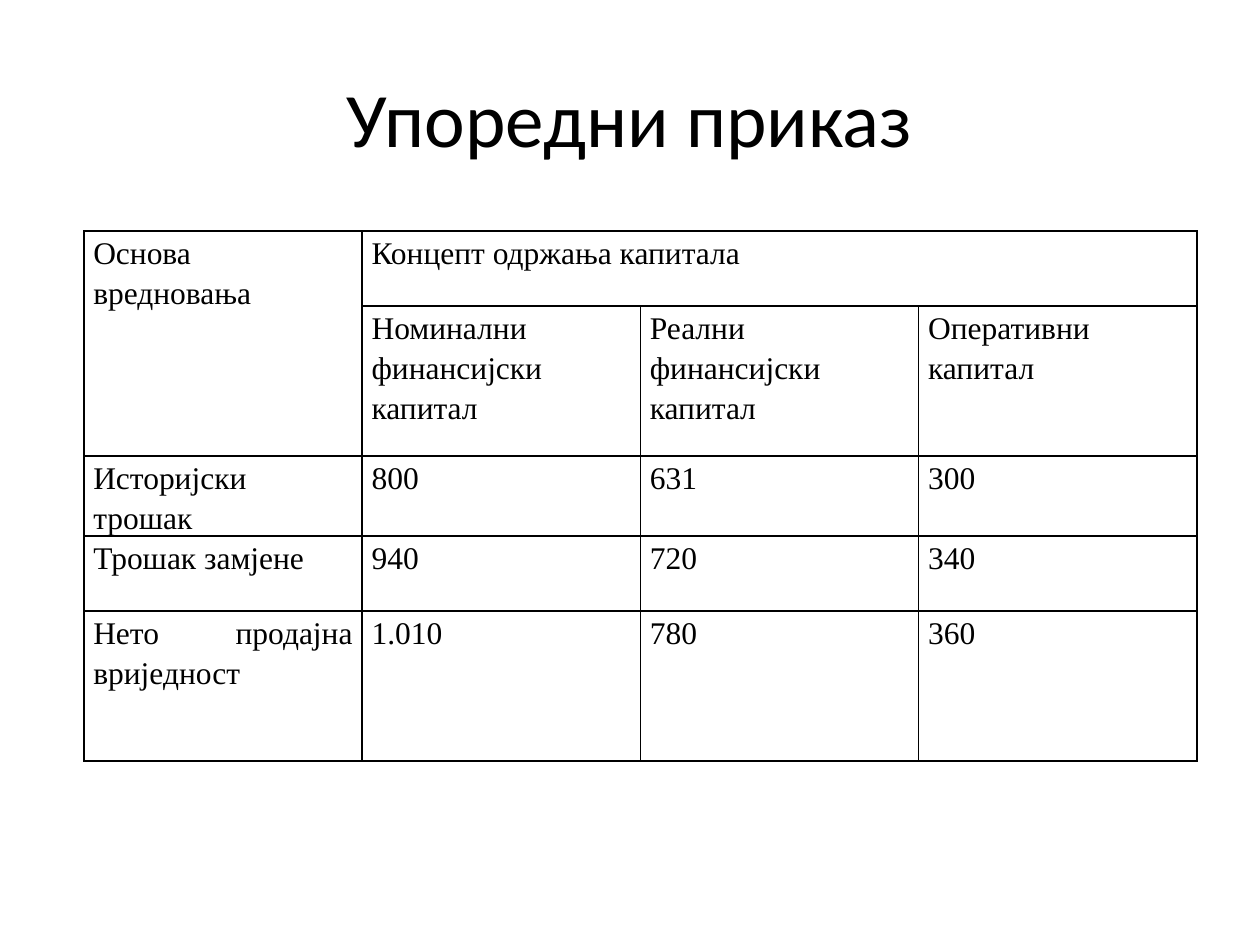
import pptx
import pptx.dml.color
import pptx.enum.text
import pptx.oxml
import pptx.oxml.ns
import pptx.util
from pptx.util import Cm

BLACK = pptx.dml.color.RGBColor(0x00, 0x00, 0x00)

HEADING = "Упоредни приказ"
CAPITAL_ROWS = [
    ["Основа вредновања", "Концепт одржања капитала", None, None],
    [None, "Номинални финансијски капитал", "Реални финансијски капитал", "Оперативни капитал"],
    ["Историјски трошак", "800", "631", "300"],
    ["Трошак замјене", "940", "720", "340"],
    ["Нето продајна вриједност", "1.010", "780", "360"],
]
SINGLE, DOUBLE = Cm(1.51), Cm(3.02)
ROW_HEIGHTS = [SINGLE, DOUBLE, SINGLE, SINGLE, DOUBLE]


class SlideBuilder:
    heading_font = "Calibri"
    body_font = "Times New Roman"
    heading_size = pptx.util.Pt(44)
    body_size = pptx.util.Pt(18)
    border_width = pptx.util.Pt(1)
    side_margin = Cm(0.19)

    def __init__(self, slide):
        self.slide = slide

    def add_words(self, paragraph, words, font_name, size, alignment):
        paragraph.alignment = alignment
        run = paragraph.add_run()
        run.text = words
        run.font.name = font_name
        run.font.size = size
        run.font.color.rgb = BLACK

    def title(self, words, left, top, width, height):
        heading = self.slide.shapes.title
        heading.left, heading.top, heading.width, heading.height = left, top, width, height
        heading.text_frame.vertical_anchor = pptx.enum.text.MSO_ANCHOR.MIDDLE
        self.add_words(heading.text_frame.paragraphs[0], words, self.heading_font,
                       self.heading_size, pptx.enum.text.PP_ALIGN.CENTER)

    def border(self, cell):
        properties = cell._tc.get_or_add_tcPr()
        for side in ("lnL", "lnR", "lnT", "lnB"):
            properties.append(pptx.oxml.parse_xml(
                f'<a:{side} {pptx.oxml.ns.nsdecls("a")} w="{self.border_width}">'
                f'<a:solidFill><a:srgbClr val="{BLACK}"/></a:solidFill></a:{side}>'))

    def fill_cell(self, cell, words):
        self.border(cell)
        cell.fill.background()
        cell.margin_left = cell.margin_right = self.side_margin
        cell.margin_top = cell.margin_bottom = 0
        if words is None:
            return
        paragraph = cell.text_frame.paragraphs[0]
        paragraph.line_spacing = 1.15
        paragraph.space_after = pptx.util.Pt(6)
        self.add_words(paragraph, words, self.body_font, self.body_size,
                       pptx.enum.text.PP_ALIGN.JUSTIFY)

    def table(self, rows, row_heights, merges, left, top, width):
        grid = self.slide.shapes.add_table(
            len(rows), len(rows[0]), left, top, width, sum(row_heights)).table
        grid.first_row = grid.horz_banding = False
        for row, height in zip(grid.rows, row_heights):
            row.height = height
        for first, last in merges:
            grid.cell(*first).merge(grid.cell(*last))
        for r, row in enumerate(rows):
            for c, words in enumerate(row):
                self.fill_cell(grid.cell(r, c), words)


def main():
    deck = pptx.Presentation()
    deck.slide_width, deck.slide_height = Cm(25.4), Cm(19.05)
    comparison = SlideBuilder(deck.slides.add_slide(deck.slide_layouts.get_by_name("Title Only")))
    comparison.title(HEADING, Cm(1.27), Cm(0.76), Cm(22.86), Cm(3.18))
    comparison.table(CAPITAL_ROWS, ROW_HEIGHTS, [((0, 0), (1, 0)), ((0, 1), (0, 3))],
                     Cm(1.69), Cm(4.66), Cm(22.44))
    deck.save("out.pptx")


if __name__ == "__main__":
    main()
